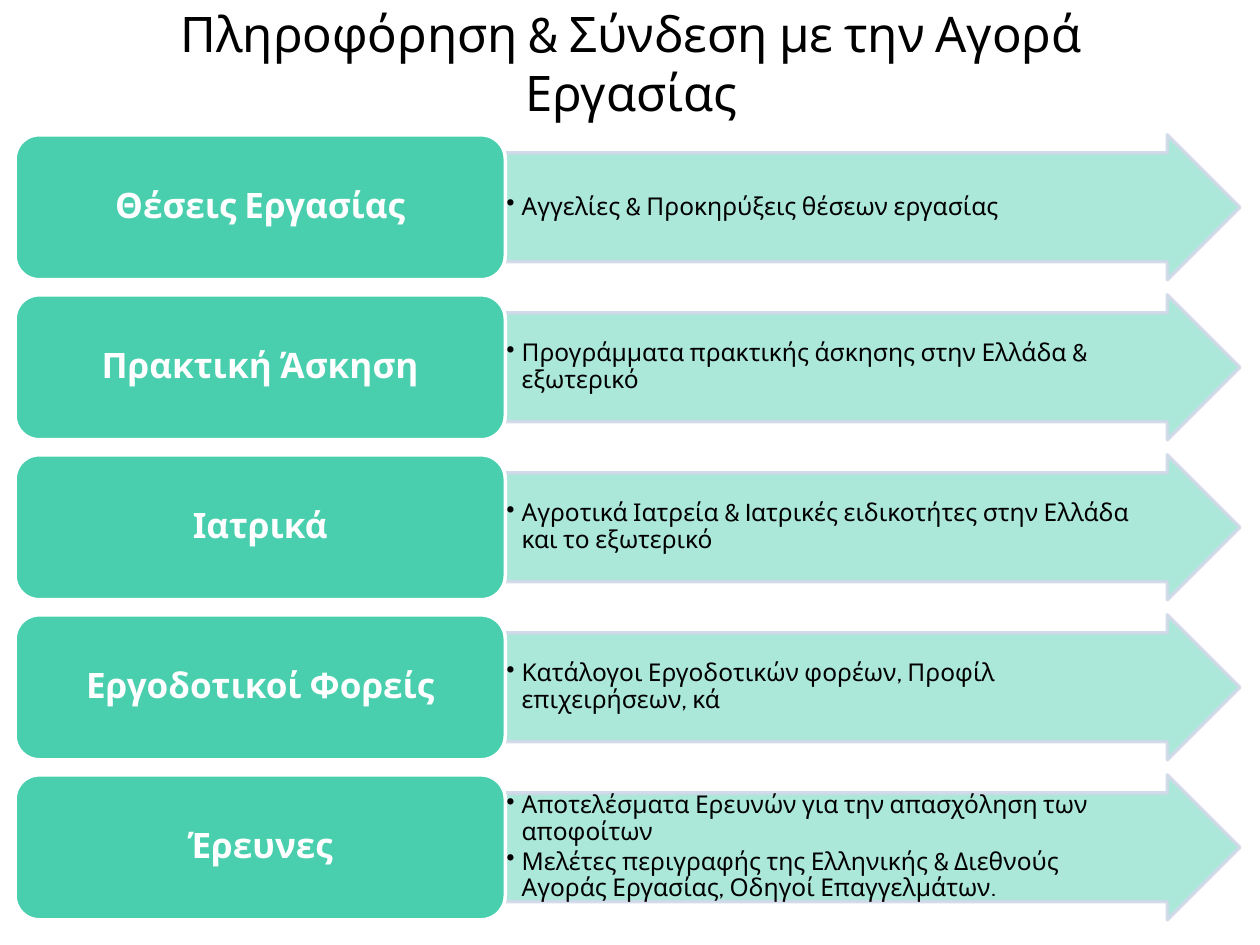
from lxml import etree
from pptx import Presentation
from pptx.dml import color
from pptx.enum import shapes, text
from pptx.oxml import ns
from pptx.util import Inches, Pt

FONT = "Cabin"
TITLE = "Πληροφόρηση & Σύνδεση με την Αγορά Εργασίας"
ROWS = [
    ("Θέσεις Εργασίας", ["Αγγελίες & Προκηρύξεις θέσεων εργασίας"]),
    ("Πρακτική Άσκηση", ["Προγράμματα πρακτικής άσκησης στην Ελλάδα & εξωτερικό"]),
    ("Ιατρικά", ["Αγροτικά Ιατρεία & Iατρικές ειδικοτήτες στην Ελλάδα και το εξωτερικό"]),
    ("Εργοδοτικοί Φορείς", ["Κατάλογοι Εργοδοτικών φορέων, Προφίλ επιχειρήσεων, κά"]),
    ("Έρευνες", [
        "Αποτελέσματα Ερευνών για την απασχόληση των αποφοίτων",
        "Μελέτες περιγραφής της Ελληνικής & Διεθνούς Αγοράς Εργασίας, Οδηγοί Επαγγελμάτων.",
    ]),
]
FIRST_TOP, ROW_STEP, ROW_HEIGHT = 1.07, 1.27, 1.15
LABEL_LEFT, LABEL_WIDTH, ARROW_WIDTH = 0.12, 3.89, 5.83


def rgb(value):
    return color.RGBColor.from_string(value)


def format_paragraph(paragraph, size, hue, alignment, bold=False):
    paragraph.alignment = alignment
    paragraph.font.name = FONT
    paragraph.font.size = Pt(size)
    paragraph.font.bold = bold
    paragraph.font.color.rgb = rgb(hue)


def set_insets(frame, left, top, right, bottom):
    frame.margin_left, frame.margin_top = Inches(left), Inches(top)
    frame.margin_right, frame.margin_bottom = Inches(right), Inches(bottom)


def set_opacity(fill_parent, percent):
    for hue in fill_parent.iter(ns.qn("a:srgbClr")):
        etree.SubElement(hue, ns.qn("a:alpha"), val=str(percent * 1000))


def add_bullet(paragraph):
    properties = paragraph._p.get_or_add_pPr()
    properties.set("marL", str(Inches(0.12)))
    properties.set("indent", str(-Inches(0.12)))
    etree.SubElement(properties, ns.qn("a:buChar"), char="•")


def add_block(slide, kind, left, top, width, fill, line):
    shape = slide.shapes.add_shape(
        kind, Inches(left), Inches(top), Inches(width), Inches(ROW_HEIGHT))
    shape.shadow.inherit = False
    shape.fill.solid()
    shape.fill.fore_color.rgb = rgb(fill)
    shape.line.color.rgb = rgb(line)
    shape.line.width = Pt(2)
    shape.text_frame.word_wrap = True
    shape.text_frame.vertical_anchor = text.MSO_ANCHOR.MIDDLE
    return shape


def add_arrow(slide, top, items):
    arrow = add_block(slide, shapes.MSO_SHAPE.RIGHT_ARROW, LABEL_LEFT + LABEL_WIDTH,
                      top, ARROW_WIDTH, "A2E6D6", "D0D8E8")
    arrow.adjustments[0] = 0.75
    arrow.adjustments[1] = 0.5
    set_opacity(arrow._element.spPr, 90)
    frame = arrow.text_frame
    set_insets(frame, 0.01, 0.01, 0.3, 0.01)
    frame.text = "\n".join(items)
    for paragraph in frame.paragraphs:
        format_paragraph(paragraph, 14, "000000", text.PP_ALIGN.LEFT)
        paragraph.level = 1
        paragraph.line_spacing = 0.9
        paragraph.space_after = Pt(2)
        add_bullet(paragraph)


def add_label(slide, top, caption):
    label = add_block(slide, shapes.MSO_SHAPE.ROUNDED_RECTANGLE, LABEL_LEFT, top,
                      LABEL_WIDTH, "49CFAE", "FFFFFF")
    set_insets(label.text_frame, 0.08, 0.04, 0.08, 0.04)
    label.text_frame.text = caption
    paragraph = label.text_frame.paragraphs[0]
    format_paragraph(paragraph, 20, "FFFFFF", text.PP_ALIGN.CENTER, bold=True)
    paragraph.line_spacing = 0.9


def set_title(slide):
    title = slide.shapes.title
    title.left, title.top = Inches(0.51), Inches(0.21)
    title.width, title.height = Inches(9), Inches(0.57)
    frame = title.text_frame
    frame.text = TITLE
    frame.word_wrap = True
    frame.auto_size = text.MSO_AUTO_SIZE.SHAPE_TO_FIT_TEXT
    frame.vertical_anchor = text.MSO_ANCHOR.MIDDLE
    format_paragraph(frame.paragraphs[0], 28, "000000", text.PP_ALIGN.CENTER)


def main():
    presentation = Presentation()
    presentation.slide_width = Inches(10)
    presentation.slide_height = Inches(7.5)
    slide = presentation.slides.add_slide(presentation.slide_layouts[5])
    set_title(slide)
    for index, (caption, items) in enumerate(ROWS):
        top = FIRST_TOP + index * ROW_STEP
        add_arrow(slide, top, items)
        add_label(slide, top, caption)
    presentation.save("out.pptx")


if __name__ == "__main__":
    main()
